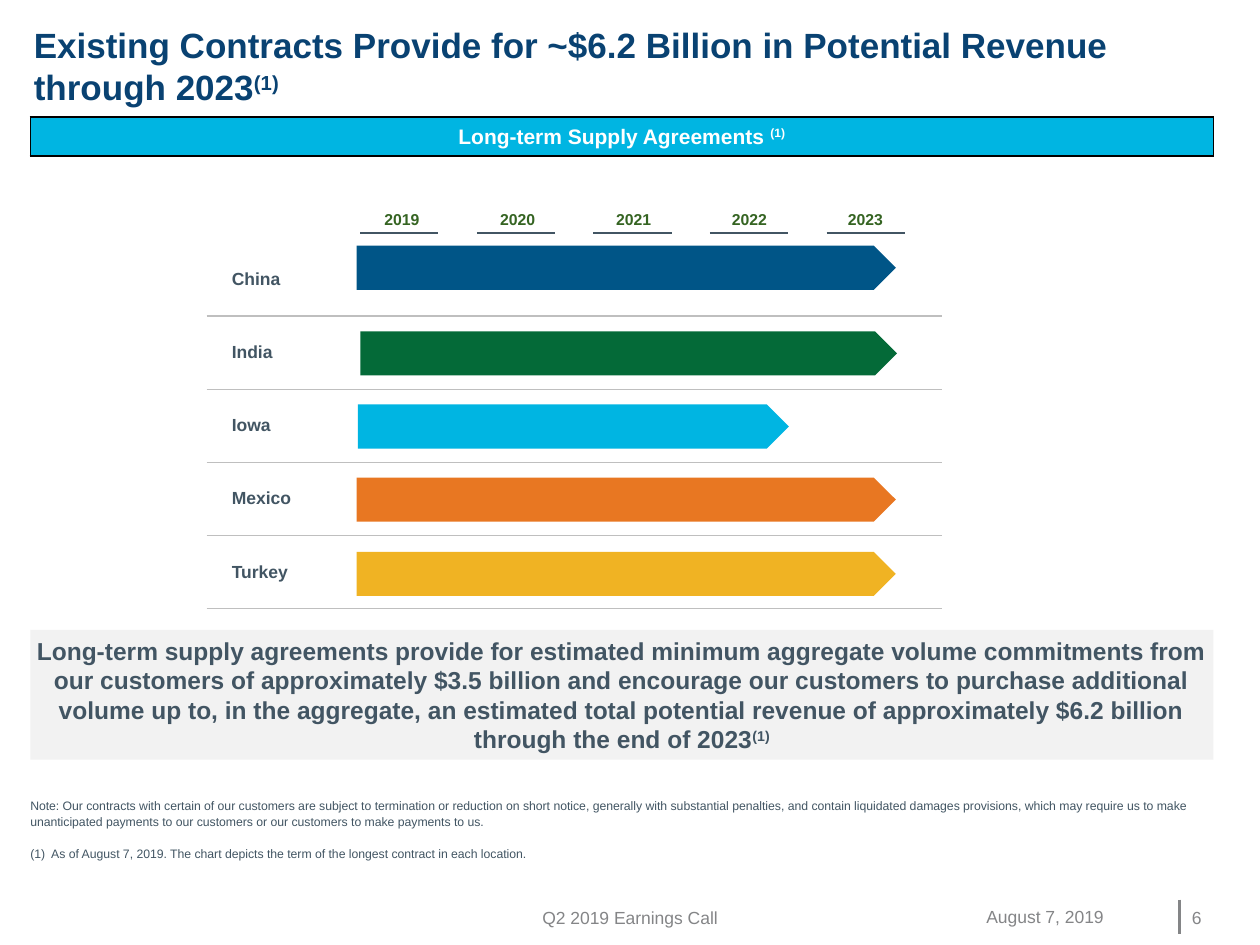
from lxml import etree
from pptx import Presentation
from pptx import util as u
from pptx.dml.color import RGBColor
from pptx.enum import shapes, text
from pptx.oxml import ns

HUES = {
    "navy": "094272", "slate": "425563", "gray": "848587", "rule": "BFBFBF",
    "pale": "F2F2F2", "white": "FFFFFF", "black": "000000", "leaf": "356422",
    "blue": "005587", "green": "046A38", "cyan": "00B5E2",
    "orange": "E87722", "gold": "F0B323",
}
YEARS = ["2019", "2020", "2021", "2022", "2023"]
SITES = [
    ("China", "blue", 2.83, 1.95, 4.28),
    ("India", "green", 2.86, 2.63, 4.26),
    ("Iowa", "cyan", 2.84, 3.21, 3.42),
    ("Mexico", "orange", 2.83, 3.79, 4.28),
    ("Turkey", "gold", 2.83, 4.38, 4.28),
]
TITLE = "Existing Contracts Provide for ~$6.2 Billion in Potential Revenue through 2023"
CLAIM = (
    "Long-term supply agreements provide for estimated minimum aggregate volume "
    "commitments from our customers of approximately $3.5 billion and encourage our "
    "customers to purchase additional volume up to, in the aggregate, an estimated "
    "total potential revenue of approximately $6.2 billion through the end of 2023"
)
NOTES = [
    "Note: Our contracts with certain of our customers are subject to termination or "
    "reduction on short notice, generally with substantial penalties, and contain "
    "liquidated damages provisions, which may require us to make unanticipated payments "
    "to our customers or our customers to make payments to us.",
    "(1)\u00a0 As of August 7, 2019. The chart depicts the term of the longest contract "
    "in each location.",
]
LEFT, MID = text.PP_ALIGN.LEFT, text.PP_ALIGN.CENTER


def hue(name):
    return RGBColor.from_string(HUES[name])


def box(at):
    return [u.Inches(n) for n in at]


def write(para, words, size, color, bold=False, align=LEFT, mark=None):
    para.alignment = align
    font = para.font
    font.name, font.size, font.bold = "Arial", u.Pt(size), bold
    font.color.rgb = hue(color)
    para.add_run().text = words
    if mark:
        run = para.add_run()
        run.text = mark
        run._r.get_or_add_rPr().set("baseline", "30000")


def pad(item, left, rest):
    item.margin_left = u.Inches(left)
    item.margin_right = item.margin_top = item.margin_bottom = u.Inches(rest)


def label(slide, at, lines, size, color, inset=None, wrap=True,
          anchor=text.MSO_ANCHOR.MIDDLE, pitch=None, **style):
    frame = slide.shapes.add_textbox(*box(at)).text_frame
    frame.word_wrap = wrap
    frame.vertical_anchor = anchor
    if inset is not None:
        pad(frame, inset, inset)
    for i, words in enumerate(lines):
        para = frame.add_paragraph() if i else frame.paragraphs[0]
        if pitch:
            para.line_spacing = u.Pt(pitch)
            if i:
                para.space_before = u.Pt(pitch)
        write(para, words, size, color, **style)


def block(slide, kind, at, color):
    shape = slide.shapes.add_shape(kind, *box(at))
    shape.shadow.inherit = False
    shape.fill.solid()
    shape.fill.fore_color.rgb = hue(color)
    shape.line.fill.background()
    return shape


def line(slide, start, end, color, width):
    rule = slide.shapes.add_connector(
        shapes.MSO_CONNECTOR.STRAIGHT, *box(start), *box(end))
    rule.line.color.rgb = hue(color)
    rule.line.width = u.Pt(width)
    etree.SubElement(rule._element.spPr, ns.qn("a:effectLst"))


def border(cell, color, sides):
    props = cell._tc.get_or_add_tcPr()
    for i, side in enumerate("LRTB"):
        edge = etree.Element(ns.qn("a:ln" + side), w="12700")
        if side in sides:
            fill = etree.SubElement(edge, ns.qn("a:solidFill"))
            etree.SubElement(fill, ns.qn("a:srgbClr"), val=HUES[color])
        else:
            etree.SubElement(edge, ns.qn("a:noFill"))
        props.insert(i, edge)


def table(slide, at, cols, rows):
    grid = slide.shapes.add_table(len(rows), len(cols), *box(at)).table
    grid.first_row = grid.horz_banding = False
    for col, width in zip(grid.columns, cols):
        col.width = u.Inches(width)
    for row, height in zip(grid.rows, rows):
        row.height = u.Inches(height)
    for cell in grid.iter_cells():
        cell.fill.background()
        cell.vertical_anchor = text.MSO_ANCHOR.MIDDLE
    return grid


def banner(slide):
    cell = table(slide, (0.24, 0.93, 9.39, 0.31), [9.39], [0.31]).cell(0, 0)
    pad(cell, 0, 0)
    cell.fill.solid()
    cell.fill.fore_color.rgb = hue("cyan")
    border(cell, "black", "LRTB")
    write(cell.text_frame.paragraphs[0], "Long-term Supply Agreements ", 12,
          "white", True, MID, "(1)")


def terms(slide):
    grid = table(slide, (1.64, 1.47, 5.83, 3.37),
                 [0.52, 0.57] + [0.92] * 5 + [0.15], [0.1, 0.36] + [0.58] * 5)
    for r, row in enumerate(grid.rows):
        for cell in row.cells:
            pad(cell, 0.01, 0.01)
            border(cell, "rule", "" if r == 0 else "B" if r == 2 else "TB" if r > 2 else "")
            para = cell.text_frame.paragraphs[0]
            etree.SubElement(para._p, ns.qn("a:endParaRPr"), sz="100")
    for c, year in enumerate(YEARS, 2):
        write(grid.cell(1, c).text_frame.paragraphs[0], year, 9, "leaf", True, MID)
    for r, site in enumerate(SITES, 2):
        cell = grid.cell(r, 0)
        cell.merge(grid.cell(r, 1))
        pad(cell, 0.2, 0.01)
        write(cell.text_frame.paragraphs[0], site[0], 10, "slate", True)


def main():
    deck = Presentation()
    deck.slide_width, deck.slide_height = u.Inches(10), u.Inches(7.5)
    slide = deck.slides.add_slide(deck.slide_layouts[6])
    top = text.MSO_ANCHOR.TOP

    label(slide, (0.17, 0.14, 9.63, 0.79), [TITLE], 20, "navy",
          anchor=top, bold=True, mark="(1)")
    banner(slide)

    claim = block(slide, shapes.MSO_SHAPE.RECTANGLE, (0.24, 5, 9.39, 1.03), "pale")
    frame = claim.text_frame
    frame.word_wrap = True
    pad(frame, 0.04, 0.04)
    write(frame.paragraphs[0], CLAIM, 14, "slate", True, MID, "(1)")
    label(slide, (0.24, 6.33, 9.55, 0.5), NOTES, 7, "slate", inset=0,
          anchor=top, pitch=9)

    terms(slide)
    for name, color, x, y, width in SITES:
        block(slide, shapes.MSO_SHAPE.PENTAGON, (x, y, width, 0.35), color)
    for i in range(len(YEARS)):
        x = 2.86 + 0.925 * i
        line(slide, (x, 1.85), (x + 0.62, 1.85), "slate", 1.5)

    label(slide, (4.2, 7.15, 1.6, 0.27), ["Q2 2019 Earnings Call"], 10, "gray",
          wrap=False, align=MID)
    label(slide, (7.73, 7.14, 1.55, 0.27), ["August 7, 2019"], 10, "gray")
    line(slide, (9.36, 7.14), (9.36, 7.41), "gray", 2)
    label(slide, (9.46, 7.15, 0.33, 0.27), ["6"], 10, "gray", inset=0)
    deck.save("out.pptx")


if __name__ == "__main__":
    main()
